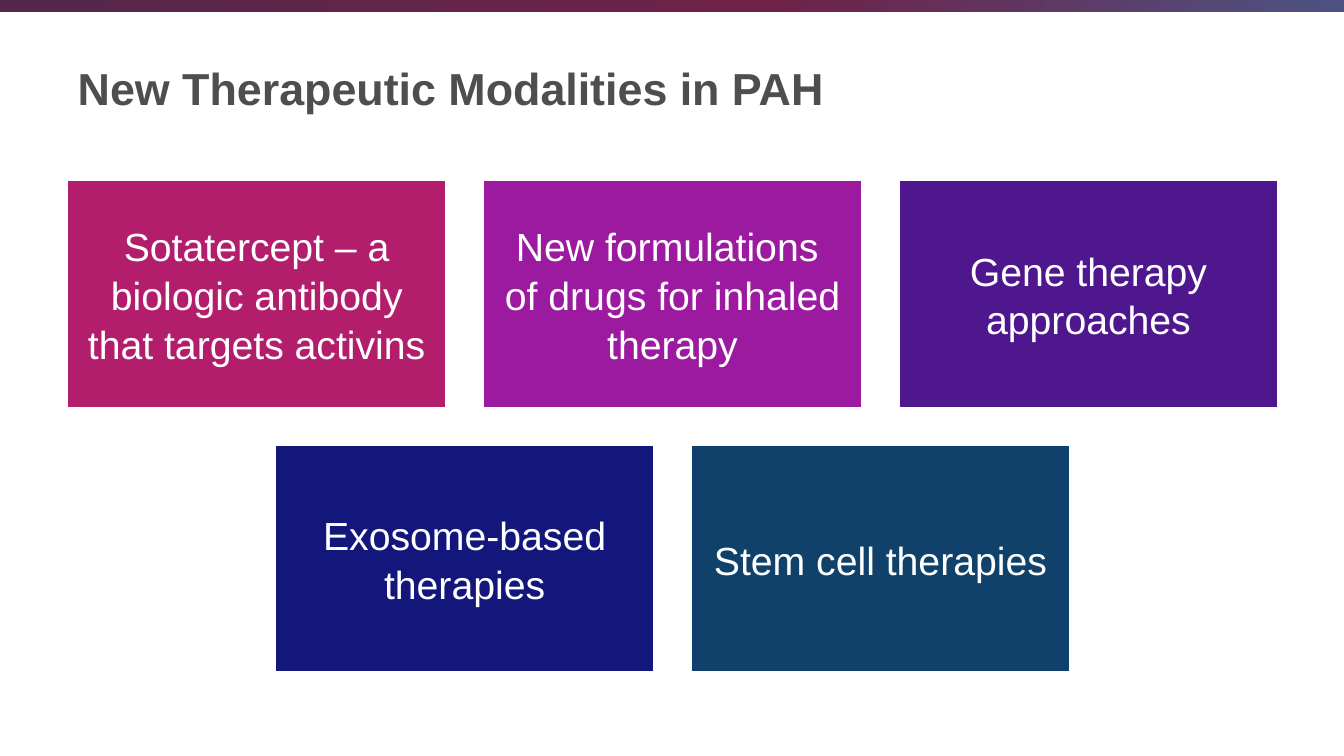
import copy

import pptx
import pptx.dml.color
import pptx.enum.shapes
import pptx.enum.text
import pptx.util

Inches = pptx.util.Inches
Pt = pptx.util.Pt
RGBColor = pptx.dml.color.RGBColor
RECTANGLE = pptx.enum.shapes.MSO_SHAPE.RECTANGLE
MIDDLE = pptx.enum.text.MSO_ANCHOR.MIDDLE
ALIGN = pptx.enum.text.PP_ALIGN

WHITE = RGBColor(0xFF, 0xFF, 0xFF)
TITLE_GRAY = RGBColor(0x4D, 0x4E, 0x4D)
BAND_STOPS = [
    (0, RGBColor(0x54, 0x28, 0x4B)),
    (0.57, RGBColor(0x6F, 0x21, 0x47)),
    (1, RGBColor(0x4D, 0x52, 0x82)),
]
RASPBERRY = RGBColor(0xB2, 0x1E, 0x6C)
MAGENTA = RGBColor(0x9C, 0x1A, 0xA0)
VIOLET = RGBColor(0x4E, 0x17, 0x8E)
NAVY = RGBColor(0x13, 0x17, 0x7C)
TEAL = RGBColor(0x10, 0x41, 0x6A)

FONT = "Arial"
SLIDE_WIDTH = Inches(13.33)
SLIDE_HEIGHT = Inches(7.5)
CARD_SHARE = 10 / 32
GAP_SHARE = 1 / 32
CARD_ASPECT = 0.6

MODALITY_ROWS = [
    [
        ("Sotatercept – a biologic antibody that targets activins", RASPBERRY),
        ("New formulations \vof drugs for inhaled therapy", MAGENTA),
        ("Gene therapy approaches", VIOLET),
    ],
    [
        ("Exosome-based therapies", NAVY),
        ("Stem cell therapies", TEAL),
    ],
]


def format_text(frame, size, color, alignment, bold=False):
    frame.word_wrap = True
    frame.vertical_anchor = MIDDLE
    for paragraph in frame.paragraphs:
        paragraph.alignment = alignment
        for run in paragraph.runs:
            run.font.name = FONT
            run.font.size = Pt(size)
            run.font.bold = bold
            run.font.color.rgb = color


def add_band(slide, left, top, width, height):
    band = slide.shapes.add_shape(RECTANGLE, left, top, width, height)
    band.shadow.inherit = False
    band.line.fill.background()
    band.fill.gradient()
    band.fill.gradient_angle = 0
    stop_list = band.fill._fill._gradFill.gsLst
    stop_list.append(copy.deepcopy(stop_list[-1]))
    for stop, (position, color) in zip(band.fill.gradient_stops, BAND_STOPS):
        stop.position = position
        stop.color.rgb = color


def place_title(slide, left, top, width, height):
    title = slide.shapes.title
    title.left, title.top, title.width, title.height = left, top, width, height
    title.text_frame.text = "New Therapeutic Modalities in PAH"
    format_text(title.text_frame, 32, TITLE_GRAY, ALIGN.LEFT, bold=True)


def add_card(slide, label, color, left, top, width, height):
    card = slide.shapes.add_shape(RECTANGLE, left, top, width, height)
    card.shadow.inherit = False
    card.fill.solid()
    card.fill.fore_color.rgb = color
    card.line.color.rgb = WHITE
    card.line.width = Pt(1)
    frame = card.text_frame
    frame.margin_left = frame.margin_right = Inches(0.12)
    frame.margin_top = frame.margin_bottom = Inches(0.12)
    frame.text = label
    frame.paragraphs[0].line_spacing = 1.04
    format_text(frame, 28, WHITE, ALIGN.CENTER)


def add_modalities(slide, left, top, width):
    card_width = int(width * CARD_SHARE)
    card_height = int(card_width * CARD_ASPECT)
    gap = int(width * GAP_SHARE)
    for row, modalities in enumerate(MODALITY_ROWS):
        count = len(modalities)
        row_width = count * card_width + (count - 1) * gap
        row_left = left + (width - row_width) // 2
        card_top = top + row * (card_height + gap)
        for column, (label, color) in enumerate(modalities):
            card_left = row_left + column * (card_width + gap)
            add_card(slide, label, color, card_left, card_top, card_width, card_height)


def main():
    presentation = pptx.Presentation()
    presentation.slide_width = SLIDE_WIDTH
    presentation.slide_height = SLIDE_HEIGHT
    slide = presentation.slides.add_slide(presentation.slide_layouts[5])
    add_band(slide, 0, 0, SLIDE_WIDTH, Inches(0.12))
    place_title(slide, Inches(0.67), Inches(0.22), Inches(11.75), Inches(1.3))
    add_modalities(slide, Inches(0.67), Inches(1.79), Inches(12))
    presentation.save("out.pptx")


if __name__ == "__main__":
    main()
